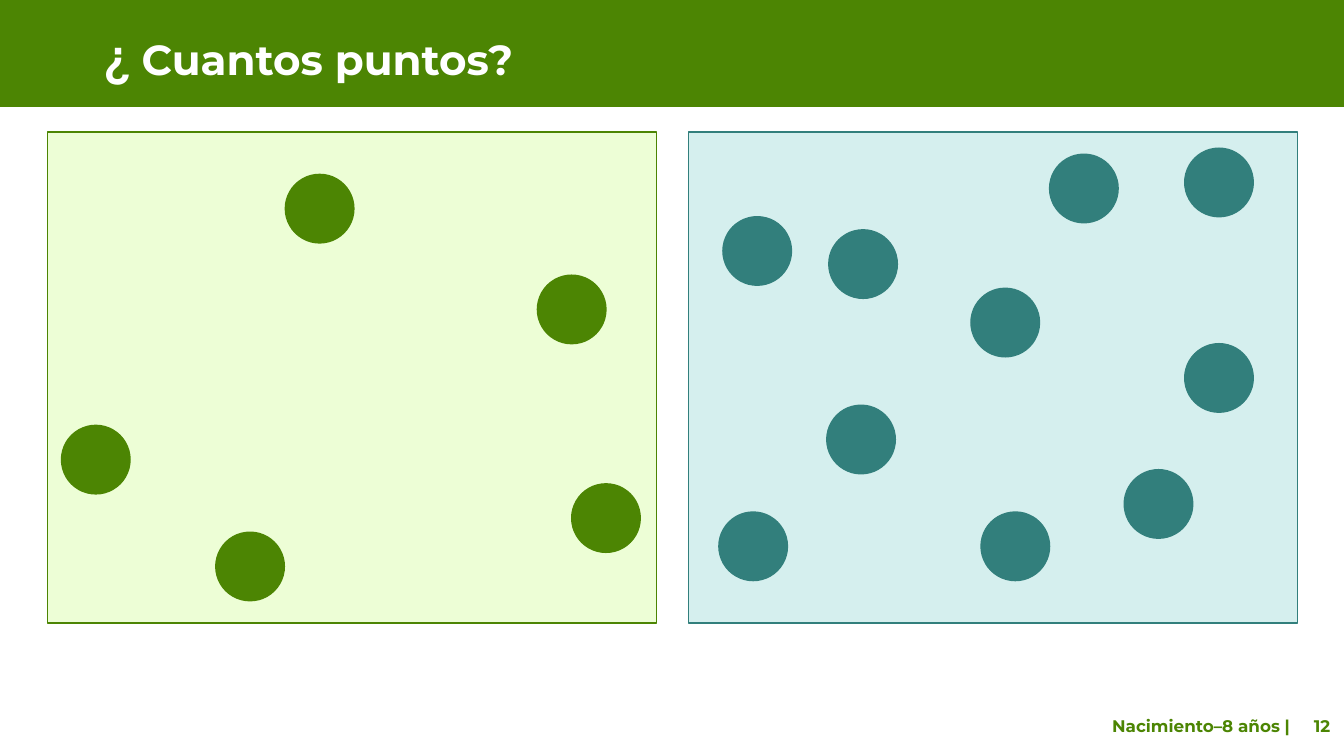
import pptx
import pptx.dml.color
import pptx.enum.shapes
import pptx.enum.text
import pptx.oxml
import pptx.oxml.ns
import pptx.util

Inches = pptx.util.Inches
SHAPES = pptx.enum.shapes.MSO_SHAPE
GREEN, TEAL, WHITE = "4C8503", "327F7C", "FFFFFF"
DOT_SIZE = 0.68
GREEN_DOTS = [(0.14, 2.91), (1.67, 3.97), (4.86, 1.42), (5.2, 3.49), (2.36, 0.42)]
TEAL_DOTS = [
    (1.37, 2.71), (2.9, 3.77), (0.34, 0.84), (0.3, 3.77), (3.58, 0.22),
    (4.92, 0.16), (2.8, 1.55), (4.92, 2.1), (4.32, 3.35), (1.39, 0.97),
]


def color(hex_string):
    """Return the colour for a hex string."""
    return pptx.dml.color.RGBColor.from_string(hex_string)


def add_filled_shape(shapes, kind, box, fill, line):
    """Add a flat shape with a one-point outline."""
    shape = shapes.add_shape(kind, *map(Inches, box))
    shape.shadow.inherit = False
    shape.fill.solid()
    shape.fill.fore_color.rgb = color(fill)
    shape.line.color.rgb = color(line)
    shape.line.width = pptx.util.Pt(1)
    return shape


def add_text_box(slide, box):
    """Add a wrapping, vertically centred text box and return its frame."""
    frame = slide.shapes.add_textbox(*map(Inches, box)).text_frame
    frame.word_wrap = True
    frame.vertical_anchor = pptx.enum.text.MSO_ANCHOR.MIDDLE
    return frame


def format_run(run, size, font_name, hex_string):
    """Set a bold font on a run."""
    run.font.size = pptx.util.Pt(size)
    run.font.name = font_name
    run.font.bold = True
    run.font.color.rgb = color(hex_string)


def add_header(slide, box):
    """Add the title band and its heading."""
    left, top, width, height = box
    band = add_filled_shape(slide.shapes, SHAPES.RECTANGLE, box, GREEN, GREEN)
    band.line.fill.background()
    frame = add_text_box(slide, (left + 0.93, top + 0.26, width - 1.48, height - 0.4))
    paragraph = frame.paragraphs[0]
    paragraph.line_spacing = 0.9
    for text, size, font_name in (("¿ ", 36, "Manrope"), ("Cuantos puntos?", 30, "Montserrat")):
        run = paragraph.add_run()
        run.text = text
        format_run(run, size, font_name, WHITE)


def add_dot_panel(slide, box, dots, fill, accent):
    """Add a grouped panel with dots placed from its top left corner."""
    left, top = box[:2]
    shapes = slide.shapes.add_group_shape().shapes
    add_filled_shape(shapes, SHAPES.RECTANGLE, box, fill, accent)
    for x, y in dots:
        dot_box = (left + x, top + y, DOT_SIZE, DOT_SIZE)
        add_filled_shape(shapes, SHAPES.OVAL, dot_box, accent, accent)


def add_footer(slide, box):
    """Add the footer label with the page number at a tab stop."""
    frame = add_text_box(slide, box)
    frame.margin_left = Inches(1.54)
    frame.margin_right = 0
    paragraph = frame.paragraphs[0]
    paragraph.text = "Nacimiento–8 años |\t12"
    namespace = pptx.oxml.ns.nsdecls("a")
    tabs = f'<a:tabLst {namespace}><a:tab pos="{Inches(2)}" algn="l"/></a:tabLst>'
    paragraph._p.get_or_add_pPr().append(pptx.oxml.parse_xml(tabs))
    for run in paragraph.runs:
        format_run(run, 12, "Montserrat", GREEN)


def main():
    """Build and save the slide."""
    presentation = pptx.Presentation()
    presentation.slide_width = Inches(13.33)
    presentation.slide_height = Inches(7.5)
    slide = presentation.slides.add_slide(presentation.slide_layouts[6])
    add_footer(slide, (9.49, 7, 3.81, 0.4))
    add_header(slide, (0, 0, 13.33, 1.06))
    add_dot_panel(slide, (0.47, 1.31, 6.04, 4.87), GREEN_DOTS, "EDFED6", GREEN)
    add_dot_panel(slide, (6.83, 1.31, 6.04, 4.87), TEAL_DOTS, "D5EFEE", TEAL)
    presentation.save("out.pptx")


if __name__ == "__main__":
    main()
